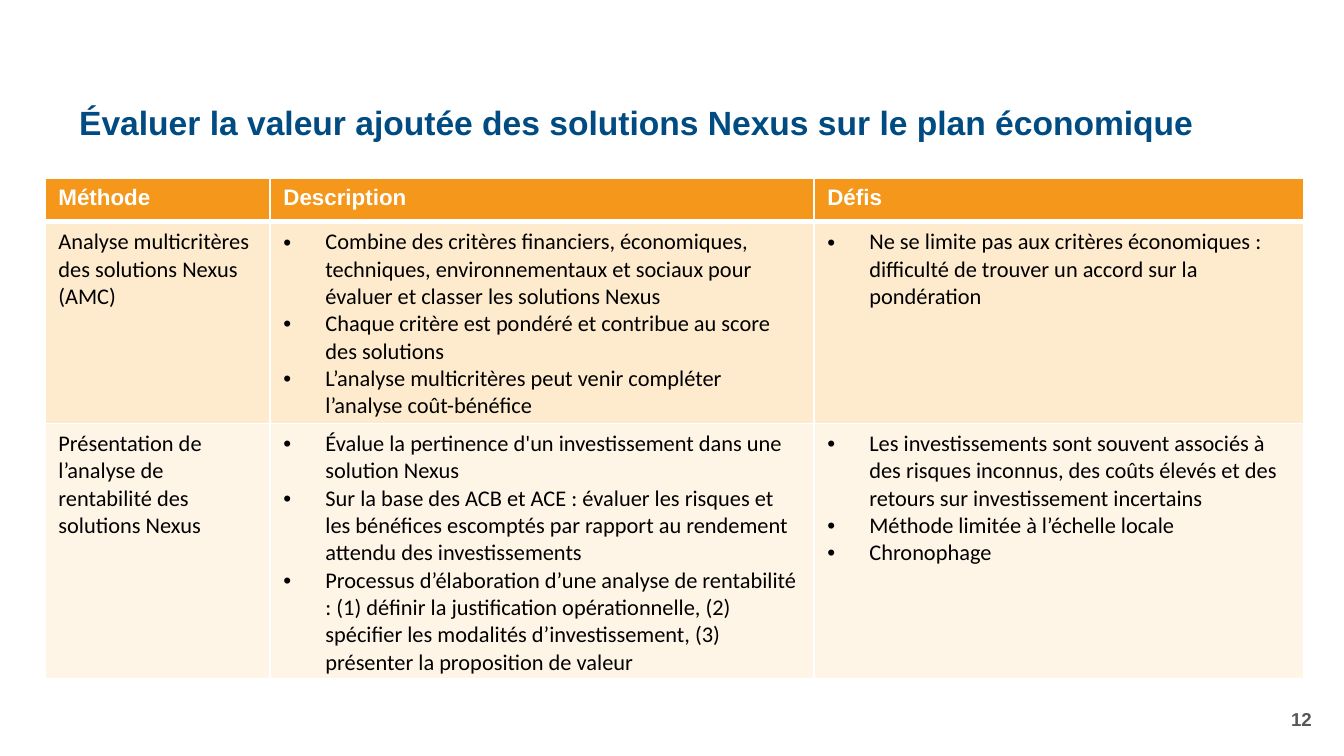
from lxml.etree import SubElement
from pptx import Presentation
from pptx.dml.color import RGBColor
from pptx.enum.text import MSO_ANCHOR, PP_ALIGN
from pptx.oxml.ns import qn
from pptx.util import Emu, Pt

PX = 914400 / 134.4
METHODS = [
    (
        "FEEACC",
        "Analyse multicritères des solutions Nexus (AMC)",
        [
            "Combine des critères financiers, économiques, techniques, "
            "environnementaux et sociaux pour évaluer et classer les solutions Nexus",
            "Chaque critère est pondéré et contribue au score des solutions",
            "L’analyse multicritères peut venir compléter l’analyse coût-bénéfice",
        ],
        [
            "Ne se limite pas aux critères économiques : "
            "difficulté de trouver un accord sur la pondération",
        ],
    ),
    (
        "FFF5E7",
        "Présentation de l’analyse de rentabilité des solutions Nexus",
        [
            "Évalue la pertinence d'un investissement dans une solution Nexus",
            "Sur la base des ACB et ACE : évaluer les risques et les bénéfices "
            "escomptés par rapport au rendement attendu des investissements",
            "Processus d’élaboration d’une analyse de rentabilité : "
            "(1) définir la justification opérationnelle, (2) spécifier les "
            "modalités d’investissement, (3) présenter la proposition de valeur",
        ],
        [
            "Les investissements sont souvent associés à des risques inconnus, "
            "des coûts élevés et des retours sur investissement incertains",
            "Méthode limitée à l’échelle locale",
            "Chronophage",
        ],
    ),
]


def px(length):
    """Turn pixels into EMU."""
    return Emu(round(length * PX))


def color(value):
    """Turn a hex string into a colour."""
    return RGBColor.from_string(value)


def write(paragraph, text, font="Arial", size=12, ink="000000", bold=False,
          align=PP_ALIGN.LEFT, spacing=None, bullet=False):
    """Fill one paragraph with formatted text."""
    if bullet:
        properties = paragraph._p.get_or_add_pPr()
        properties.set("marL", str(px(42)))
        properties.set("indent", str(-px(42)))
        SubElement(properties, qn("a:buFont"), typeface="Arial")
        SubElement(properties, qn("a:buChar"), char="•")
    paragraph.alignment = align
    if spacing:
        paragraph.line_spacing = spacing
    span = paragraph.add_run()
    span.text = text
    span.font.name = font
    span.font.size = Pt(size)
    span.font.bold = bold
    span.font.color.rgb = color(ink)


class SlideBuilder:
    """Hold the style and the current slide."""

    header_fill = "F4971A"
    border = "FFFFFF"

    def __init__(self, page):
        """Keep the slide to draw on."""
        self.page = page

    def text(self, left, top, width, height, text, **style):
        """Add a vertically centred text box."""
        box = self.page.shapes.add_textbox(px(left), px(top), px(width), px(height))
        frame = box.text_frame
        frame.word_wrap = True
        frame.vertical_anchor = MSO_ANCHOR.MIDDLE
        write(frame.paragraphs[0], text, **style)

    def cell(self, cell, texts, fill, top=1, bottom=1, **style):
        """Fill a table cell, one paragraph for each text."""
        properties = cell._tc.get_or_add_tcPr()
        for side, width in (("L", 1), ("R", 1), ("T", top), ("B", bottom)):
            line = SubElement(properties, qn(f"a:ln{side}"), w=str(Pt(width)))
            solid = SubElement(line, qn("a:solidFill"))
            SubElement(solid, qn("a:srgbClr"), val=self.border)
        cell.fill.solid()
        cell.fill.fore_color.rgb = color(fill)
        frame = cell.text_frame
        for index, text in enumerate(texts):
            paragraph = frame.add_paragraph() if index else frame.paragraphs[0]
            write(paragraph, text, **style)

    def table(self, left, top, widths, heights, headings, methods):
        """Add the table of methods below its heading row."""
        table = self.page.shapes.add_table(
            len(heights), len(widths), px(left), px(top),
            px(sum(widths)), px(sum(heights))).table
        table.horz_banding = False
        for column, width in zip(table.columns, widths):
            column.width = px(width)
        for row, height in zip(table.rows, heights):
            row.height = px(height)
        for index, heading in enumerate(headings):
            self.cell(table.cell(0, index), [heading], self.header_fill,
                      bottom=3, ink="FFFFFF", bold=True)
        for row, (fill, name, *lists) in enumerate(methods, 1):
            edge = 3 if row == 1 else 1
            self.cell(table.cell(row, 0), [name], fill, top=edge, font="Calibri")
            for index, items in enumerate(lists, 1):
                self.cell(table.cell(row, index), items, fill, top=edge,
                          font="Calibri", bullet=True)


def main():
    """Build and save the slide."""
    deck = Presentation()
    deck.slide_width, deck.slide_height = px(1344), px(756)
    slide = SlideBuilder(deck.slides.add_slide(deck.slide_layouts[6]))
    slide.text(66, 85, 1259, 79,
               "Évaluer la valeur ajoutée des solutions Nexus sur le plan économique",
               size=18, ink="004C82", bold=True, spacing=0.9)
    slide.text(1023, 699, 302, 40, "12", size=10, ink="575756", bold=True,
               align=PP_ALIGN.RIGHT)
    slide.table(45, 178, [225, 544, 490], [44, 183, 231],
                ["Méthode", "Description", "Défis"], METHODS)
    deck.save("out.pptx")


if __name__ == "__main__":
    main()
